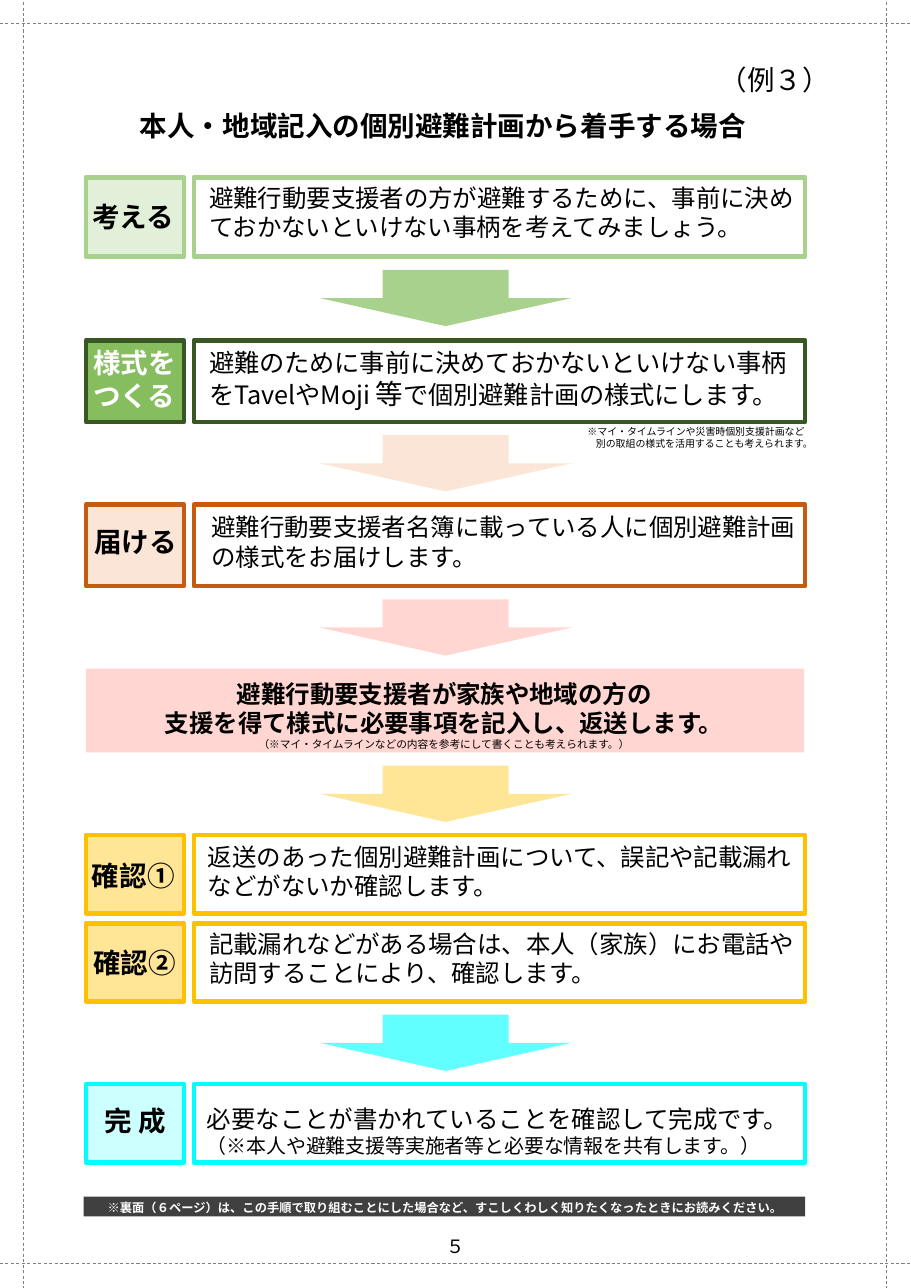
from dataclasses import dataclass
from lxml import etree
from pptx import Presentation
from pptx.dml.color import RGBColor
from pptx.enum.dml import MSO_LINE
from pptx.enum.shapes import MSO_CONNECTOR, MSO_SHAPE
from pptx.enum.text import MSO_ANCHOR, MSO_AUTO_SIZE, PP_ALIGN
from pptx.oxml.ns import qn
from pptx.util import Inches, Pt

FONT = "Noto Sans CJK JP"
LEFT, CENTER, RIGHT = PP_ALIGN.LEFT, PP_ALIGN.CENTER, PP_ALIGN.RIGHT
RECT, DOWN_ARROW = MSO_SHAPE.RECTANGLE, MSO_SHAPE.DOWN_ARROW
STRAIGHT = MSO_CONNECTOR.STRAIGHT
TOP = MSO_ANCHOR.TOP
GROW = MSO_AUTO_SIZE.SHAPE_TO_FIT_TEXT
DASH = MSO_LINE.DASH


@dataclass
class Span:
    text: str
    size: float = 16
    bold: bool = False
    color: str = "000000"


@dataclass
class Para:
    spans: list[Span]
    align: PP_ALIGN = LEFT
    indent: float = 0


@dataclass
class Step:
    top: float
    height: float
    fill: str
    line: str
    label: list[Para]
    label_left: float
    label_top: float
    text: list[Para]
    text_left: float
    text_top: float


def rgb(color: str) -> RGBColor:
    return RGBColor.from_string(color)


def lengths(*values: float) -> list[Inches]:
    return [Inches(value) for value in values]


def line_of(text: str, size: float = 16, bold: bool = False,
            color: str = "000000", align: PP_ALIGN = LEFT, indent: float = 0) -> Para:
    """Make a paragraph with a single span."""
    return Para([Span(text, size, bold, color)], align, indent)


def label(*texts: str, color: str = "000000") -> list[Para]:
    return [line_of(text, 18, True, color, CENTER) for text in texts]


def write(box, paras: list[Para], wrap: bool = False, inset: bool = True) -> None:
    frame = box.text_frame
    frame_format = {"word_wrap": wrap, "auto_size": GROW, "vertical_anchor": TOP}
    for side, margin in (("left", 0.1), ("right", 0.1), ("top", 0.05), ("bottom", 0.05)):
        frame_format[f"margin_{side}"] = Inches(margin if inset else 0)
    for name, value in frame_format.items():
        setattr(frame, name, value)
    for index, para in enumerate(paras):
        paragraph = frame.add_paragraph() if index else frame.paragraphs[0]
        para_format = {"alignment": para.align, "line_spacing": 1.0,
                       "space_before": Pt(0), "space_after": Pt(0)}
        for name, value in para_format.items():
            setattr(paragraph, name, value)
        if para.indent:
            paragraph._p.get_or_add_pPr().set("marL", str(Inches(para.indent)))
        for span in para.spans:
            run = paragraph.add_run()
            run.text = span.text
            run_format = {"name": FONT, "size": Pt(span.size), "bold": span.bold}
            for name, value in run_format.items():
                setattr(run.font, name, value)
            run.font.color.rgb = rgb(span.color)
            east_asian = etree.SubElement(run._r.get_or_add_rPr(), qn("a:ea"))
            east_asian.set("typeface", FONT)


def add_text(page, at: tuple, paras: list[Para], wrap: bool = False,
             inset: bool = True) -> None:
    write(page.shapes.add_textbox(*lengths(*at)), paras, wrap, inset)


def add_block(page, kind: MSO_SHAPE, at: tuple, fill: str = "", line: str = "") -> None:
    shape = page.shapes.add_shape(kind, *lengths(*at))
    shape.shadow.inherit = False
    if fill:
        shape.fill.solid()
        shape.fill.fore_color.rgb = rgb(fill)
    else:
        shape.fill.background()
    if line:
        shape.line.color.rgb = rgb(line)
        shape.line.width = Pt(3)
    else:
        shape.line.fill.background()


def add_step(page, step: Step) -> None:
    add_text(page, (step.text_left, step.text_top, 5.6, 0.64), step.text, wrap=True)
    add_block(page, RECT, (0.78, step.top, 0.89, step.height), step.fill, step.line)
    add_text(page, (step.label_left, step.label_top, 0.96, 0.4), step.label)
    add_block(page, RECT, (1.76, step.top, 5.55, step.height), line=step.line)


def add_trim_line(page, *ends: float) -> None:
    connector = page.shapes.add_connector(STRAIGHT, *lengths(*ends))
    connector.line.color.rgb = rgb("808080")
    connector.line.width = Pt(0.5)
    connector.line.dash_style = DASH
    etree.SubElement(connector._element.spPr, qn("a:effectLst"))


STEPS = [
    Step(1.61, 0.72, "E2F0D9", "A9D18E", label("考える"), 0.73, 1.77,
         [line_of("避難行動要支援者の方が避難するために、事前に決めておかないといけない事柄を考えてみましょう。")],
         1.8, 1.61),
    Step(3.09, 0.74, "85BD5F", "385723", label("様式を", "つくる", color="FFFFFF"), 0.74, 3.09,
         [Para([Span("避難のために事前に決めておかないといけない事柄をTavelやMoji ", 16.5),
                Span("等", 18), Span("で個別避難計画の様式にします。", 16.5)])],
         1.8, 3.1),
    Step(4.58, 0.74, "FBE5D6", "C55A11", label("届ける"), 0.75, 4.72,
         [line_of("避難行動要支援者名簿に載っている人に個別避難計画の様式をお届けします。")],
         1.82, 4.6),
    Step(7.58, 0.71, "FFE697", "FFC000", label("確認①"), 0.73, 7.75,
         [line_of("返送のあった個別避難計画について、誤記や記載漏れなどがないか確認します。")],
         1.79, 7.59),
    Step(8.38, 0.71, "FFE697", "FFC000", label("確認②"), 0.74, 8.54,
         [line_of("記載漏れなどがある場合は、本人（家族）にお電話や訪問することにより、確認します。")],
         1.8, 8.38),
    Step(9.84, 0.71, "CCFFFF", "00FFFF", label("完 成"), 0.75, 9.97,
         [line_of("必要なことが書かれていることを確認して完成です。"),
          line_of("（※本人や避難支援等実施者等と必要な情報を共有します。）", 13)],
         1.78, 9.97),
]
ARROWS = {2.45: "A9D18E", 3.95: "FBE5D6", 5.44: "FFD6D1", 6.95: "FFE697", 9.21: "61FFFF"}


def main() -> None:
    deck = Presentation()
    deck.slide_width, deck.slide_height = lengths(8.27, 11.69)
    page = deck.slides.add_slide(deck.slide_layouts[5])

    title = page.shapes.title
    title.left, title.top, title.width, title.height = lengths(1.17, 0.94, 5.95, 0.41)
    write(title, [line_of("本人・地域記入の個別避難計画から着手する場合", 18, True)])
    add_text(page, (6.38, 0.52, 1.25, 0.41), [line_of("（例３）", 18, align=RIGHT)])

    for step in STEPS:
        add_step(page, step)
    for top, color in ARROWS.items():
        add_block(page, DOWN_ARROW, (2.9, top, 2.29, 0.51), color)

    add_block(page, RECT, (0.78, 6.07, 6.52, 0.76), "FFD6D1")
    add_text(page, (1.04, 6.11, 5.99, 0.64),
             [line_of(text, bold=True, align=CENTER) for text in (
                 "避難行動要支援者が家族や地域の方の",
                 "支援を得て様式に必要事項を記入し、返送します。")], wrap=True)
    add_text(page, (2.31, 6.7, 3.44, 0.12),
             [line_of("（※マイ・タイムラインなどの内容を参考にして書くことも考えられます。）", 7, align=CENTER)],
             inset=False)
    add_text(page, (5.23, 3.86, 2.18, 0.22),
             [line_of("※マイ・タイムラインや災害時個別支援計画など", 6.5, align=CENTER),
              line_of("別の取組の様式を活用することも考えられます。", 6.5, indent=0.18)],
             wrap=True, inset=False)

    add_block(page, RECT, (0.76, 10.86, 6.55, 0.18), "404040")
    add_text(page, (0.96, 10.89, 6.17, 0.13),
             [line_of("※裏面（６ページ）は、この手順で取り組むことにした場合など、"
                      "すこしくわしく知りたくなったときにお読みください。", 8, True, "FFFFFF", CENTER)],
             inset=False)

    for x in (0.21, 8.05):
        add_trim_line(page, x, -0.13, x, 11.82)
    for y in (0.21, 11.47):
        add_trim_line(page, -0.15, y, 8.42, y)
    add_text(page, (3.95, 11.16, 0.37, 0.3), [line_of("５", 12, align=CENTER)])
    deck.save("out.pptx")


if __name__ == "__main__":
    main()
